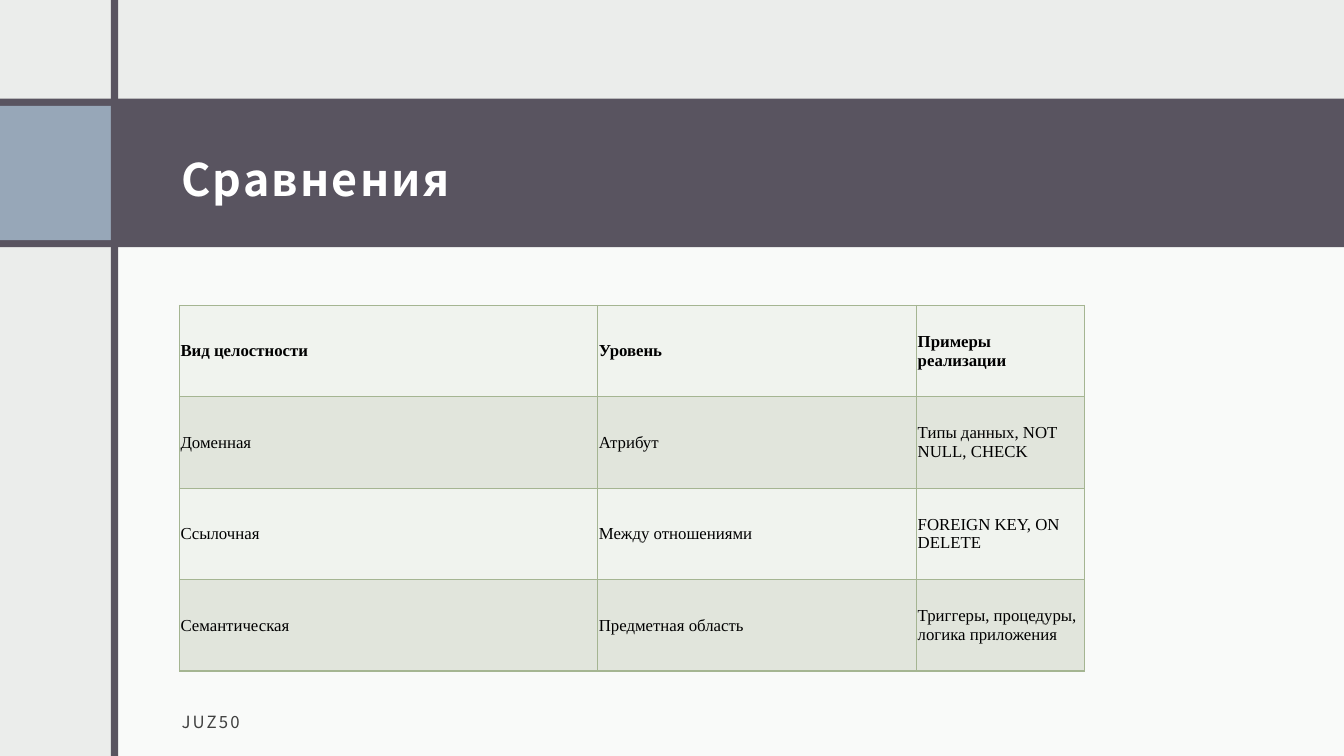
from lxml import etree
from pptx import Presentation
from pptx.dml.color import RGBColor
from pptx.enum import shapes, text
from pptx.oxml import ns
from pptx.util import Pt

WIDTH, HEIGHT = 960, 540
PALE, DARK, BLUE, WHITE = "EBEDEB", "595460", "97A7B8", "FFFFFF"
BORDER = "A5B592"
ROW_FILLS = ("F0F3EE", "E1E5DC")
SANS, SERIF = "Noto Sans CJK JP", "Times New Roman"

COLUMN_WIDTHS = (298.8, 227.8, 120)
ROW_HEIGHT = 65.3
COMPARISON = (
    ("Вид целостности", "Уровень", "Примеры реализации"),
    ("Доменная", "Атрибут", "Типы данных, NOT NULL, CHECK"),
    ("Ссылочная", "Между отношениями", "FOREIGN KEY, ON DELETE"),
    ("Семантическая", "Предметная область", "Триггеры, процедуры, логика приложения"),
)


def color(hex_string):
    return RGBColor.from_string(hex_string)


def paint(fill, hex_string):
    fill.solid()
    fill.fore_color.rgb = color(hex_string)


def set_font(paragraph, name, size, hex_string, bold=False):
    font = paragraph.font
    font.name, font.size, font.bold = name, Pt(size), bold
    font.color.rgb = color(hex_string)


def add_block(slide, left, top, width, height, hex_string, opacity=100):
    block = slide.shapes.add_shape(
        shapes.MSO_SHAPE.RECTANGLE, Pt(left), Pt(top), Pt(width), Pt(height))
    block.shadow.inherit = False
    paint(block.fill, hex_string)
    block.line.fill.background()
    if opacity < 100:
        srgb = block.fill._xPr.find(".//" + ns.qn("a:srgbClr"))
        etree.SubElement(srgb, ns.qn("a:alpha"), val=str(opacity * 1000))


def add_label(slide, wording, top, width, height, inset_top, size, hex_string, bold=False):
    """Add letter-spaced text aligned to the content's left edge."""
    label = slide.shapes.add_textbox(Pt(121), Pt(top), Pt(width), Pt(height))
    frame = label.text_frame
    frame.word_wrap = True
    frame.vertical_anchor = text.MSO_ANCHOR.MIDDLE
    frame.margin_left = frame.margin_right = Pt(8.64)
    frame.margin_top, frame.margin_bottom = Pt(inset_top), Pt(7.2)
    paragraph = frame.paragraphs[0]
    run = paragraph.add_run()
    run.text = wording
    run._r.get_or_add_rPr().set("spc", "150")
    set_font(paragraph, SANS, size, hex_string, bold)


def add_borders(cell):
    properties = cell._tc.get_or_add_tcPr()
    for position, side in enumerate(("lnL", "lnR", "lnT", "lnB")):
        line = etree.Element(ns.qn("a:" + side), w=str(Pt(1)))
        solid = etree.SubElement(line, ns.qn("a:solidFill"))
        etree.SubElement(solid, ns.qn("a:srgbClr"), val=BORDER)
        properties.insert(position, line)


def fill_cell(cell, wording, row_index):
    cell.text = wording
    cell.vertical_anchor = text.MSO_ANCHOR.MIDDLE
    cell.margin_left = cell.margin_right = Pt(0.75)
    cell.margin_top = cell.margin_bottom = Pt(0.75)
    paragraph = cell.text_frame.paragraphs[0]
    paragraph.space_after = Pt(10)
    set_font(paragraph, SERIF, 12, "000000", bold=row_index == 0)
    paint(cell.fill, ROW_FILLS[row_index % 2])
    add_borders(cell)


def add_comparison(slide):
    table = slide.shapes.add_table(
        len(COMPARISON), len(COLUMN_WIDTHS), Pt(128.2), Pt(218.2),
        Pt(sum(COLUMN_WIDTHS)), Pt(ROW_HEIGHT * len(COMPARISON))).table
    for column, width in zip(table.columns, COLUMN_WIDTHS):
        column.width = Pt(width)
    for row_index, wordings in enumerate(COMPARISON):
        table.rows[row_index].height = Pt(ROW_HEIGHT)
        for column_index, wording in enumerate(wordings):
            fill_cell(table.cell(row_index, column_index), wording, row_index)


def main():
    deck = Presentation()
    deck.slide_width, deck.slide_height = Pt(WIDTH), Pt(HEIGHT)
    slide = deck.slides.add_slide(deck.slide_layouts[6])
    paint(slide.background.fill, PALE)

    add_block(slide, 82, 168, WIDTH - 82, HEIGHT - 168, WHITE, opacity=75)
    add_block(slide, 0, 70.5, WIDTH, 106, DARK)
    add_block(slide, 0, 75.6, 79.2, 96, BLUE)
    add_block(slide, 79.2, 0, 5.2, HEIGHT, DARK)

    add_label(slide, "Сравнения", 75.6, 788.4, 96, 14.4, 32, WHITE, bold=True)
    add_comparison(slide)
    add_label(slide, "JUZ50", 496.8, 389.5, 36, 8.64, 12, "404040")
    deck.save("out.pptx")


if __name__ == "__main__":
    main()
